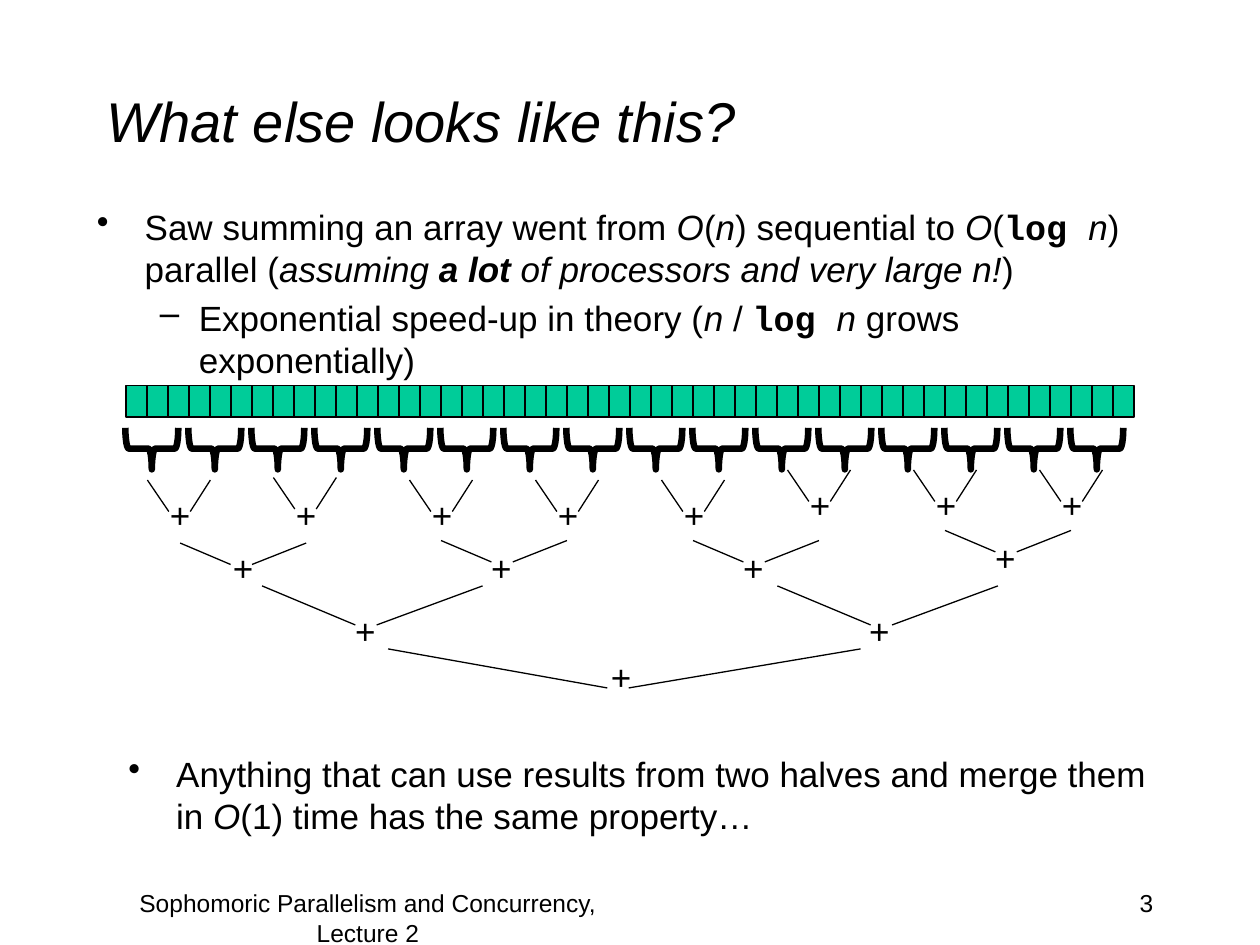
from dataclasses import dataclass

from lxml import etree
from pptx import Presentation
from pptx.dml.color import RGBColor
from pptx.enum.shapes import MSO_CONNECTOR, MSO_SHAPE
from pptx.enum.text import MSO_ANCHOR, MSO_AUTO_SIZE, PP_ALIGN
from pptx.oxml.ns import qn
from pptx.util import Inches, Pt

RECTANGLE = MSO_SHAPE.RECTANGLE
LEFT_BRACE = MSO_SHAPE.LEFT_BRACE
STRAIGHT = MSO_CONNECTOR.STRAIGHT
TOP, MIDDLE = MSO_ANCHOR.TOP, MSO_ANCHOR.MIDDLE
LEFT, CENTER, RIGHT = PP_ALIGN.LEFT, PP_ALIGN.CENTER, PP_ALIGN.RIGHT
GROW = MSO_AUTO_SIZE.SHAPE_TO_FIT_TEXT


@dataclass(frozen=True)
class Theme:
    ink: RGBColor = RGBColor(0x00, 0x00, 0x00)
    cell: RGBColor = RGBColor(0x00, 0xCC, 0x99)
    font: str = "Arial"
    code_font: str = "Courier New"
    title_size: int = 32
    body_size: int = 20
    footer_size: int = 14
    thin: float = 0.75
    thick: float = 3.75


class SlideBuilder:
    def __init__(self, slide, theme):
        self.slide = slide
        self.theme = theme

    def text_box(self, left, top, width, height, anchor=TOP, wrap=True):
        box = self.slide.shapes.add_textbox(
            Inches(left), Inches(top), Inches(width), Inches(height))
        frame = box.text_frame
        frame.word_wrap = wrap
        frame.vertical_anchor = anchor
        return frame

    def add_runs(self, paragraph, runs, size):
        for text, style in runs:
            run = paragraph.add_run()
            run.text = text
            font = run.font
            font.name = self.theme.code_font if "c" in style else self.theme.font
            font.size = Pt(size)
            font.color.rgb = self.theme.ink
            font.bold = "b" in style
            font.italic = "i" in style

    def label(self, box, text, size, align=LEFT, anchor=TOP, style=""):
        paragraph = self.text_box(*box, anchor=anchor).paragraphs[0]
        paragraph.alignment = align
        self.add_runs(paragraph, [(text, style)], size)

    def bullets(self, box, items):
        frame = self.text_box(*box)
        for index, (level, runs) in enumerate(items):
            paragraph = frame.add_paragraph() if index else frame.paragraphs[0]
            paragraph.level = level
            paragraph.space_before = Pt(4)
            margin, indent, mark = ((0.38, -0.38, "•"), (0.81, -0.31, "–"))[level]
            properties = paragraph._p.get_or_add_pPr()
            properties.set("marL", str(Inches(margin)))
            properties.set("indent", str(Inches(indent)))
            etree.SubElement(properties, qn("a:buChar")).set("char", mark)
            self.add_runs(paragraph, runs, self.theme.body_size)

    def outlined(self, kind, left, top, width, height, weight):
        shape = self.slide.shapes.add_shape(
            kind, Inches(left), Inches(top), Inches(width), Inches(height))
        shape.shadow.inherit = False
        shape.line.color.rgb = self.theme.ink
        shape.line.width = Pt(weight)
        return shape

    def array_cell(self, left, top, width, height):
        cell = self.outlined(RECTANGLE, left, top, width, height, self.theme.thin)
        cell.fill.solid()
        cell.fill.fore_color.rgb = self.theme.cell

    def brace(self, left, top, width, height):
        brace = self.outlined(LEFT_BRACE, left, top, width, height, self.theme.thick)
        brace.fill.background()
        brace.rotation = 270

    def line(self, x1, y1, x2, y2):
        line = self.slide.shapes.add_connector(
            STRAIGHT, Inches(x1), Inches(y1), Inches(x2), Inches(y2))
        line.line.color.rgb = self.theme.ink
        line.line.width = Pt(self.theme.thin)
        etree.SubElement(line._element.spPr, qn("a:effectLst"))

    def plus(self, left, top):
        frame = self.text_box(left, top, 0.36, 0.44, wrap=False)
        frame.auto_size = GROW
        self.add_runs(frame.paragraphs[0], [("+", "")], self.theme.body_size)

    def merge(self, left, top, plus_left, plus_top, span, reach, drop):
        self.line(left, top, left + reach, top + drop)
        self.line(left + span, top, left + reach + 0.17, top + drop)
        self.plus(plus_left, plus_top)


SPEEDUP = [
    (0, [("Saw summing an array went from ", ""), ("O", "i"), ("(", ""),
         ("n", "i"), (") sequential to ", ""), ("O", "i"), ("(", ""),
         ("log ", "cb"), ("n", "i"), (") parallel (", ""), ("assuming ", "i"),
         ("a lot", "bi"), (" of processors and very large n!", "i"), (")", "")]),
    (1, [("Exponential speed-up in theory (", ""), ("n ", "i"), ("/ ", ""),
         ("log ", "cb"), ("n ", "i"), ("grows exponentially)", "")]),
]
PROPERTY = [
    (0, [("Anything that can use results from two halves and merge them in ", ""),
         ("O", "i"), ("(1) time has the same property…", "")]),
]

# span, reach, drop, then (left, top, plus left, plus top) per merge
TREE = [
    (0.5, 0.17, 0.25,
     [(1.17, 3.81, 1.25, 3.87), (2.17, 3.79, 2.25, 3.87)]
     + [(x + 0.25, 3.81, x + 0.33, 3.87) for x in (3, 4, 5)]
     + [(x + 0.25, 3.73, x + 0.33, 3.79) for x in (6, 7, 8)]),
    (1, 0.4, 0.17,
     [(1.43, 4.31, 1.75, 4.29), (3.5, 4.29, 3.8, 4.29),
      (5.5, 4.29, 5.8, 4.29), (7.5, 4.21, 7.8, 4.21)]),
    (1.75, 0.74, 0.31, [(2.08, 4.65, 2.72, 4.79), (6.17, 4.65, 6.8, 4.79)]),
    (3.75, 1.74, 0.31, [(3.08, 5.15, 4.75, 5.15)]),
]


def main():
    presentation = Presentation()
    presentation.slide_width = Inches(10)
    presentation.slide_height = Inches(7.5)
    theme = Theme()
    builder = SlideBuilder(
        presentation.slides.add_slide(presentation.slide_layouts[6]), theme)

    builder.label((0.75, 0.33, 8.5, 1.25), "What else looks like this?",
                  theme.title_size, anchor=MIDDLE, style="i")
    builder.bullets((0.67, 1.58, 8.83, 1.25), SPEEDUP)
    builder.label((7.17, 7, 2.08, 0.5), "3", theme.footer_size, RIGHT)
    builder.label((0.67, 7, 4.5, 0.5),
                  "Sophomoric Parallelism and Concurrency, Lecture 2",
                  theme.footer_size, CENTER)

    for index in range(48):
        builder.array_cell(1 + index / 6, 3.06, 1 / 6, 0.25)
    for index in range(16):
        builder.brace(1.04 + index / 2, 3.35, 0.33, 0.42)
    for span, reach, drop, merges in TREE:
        for place in merges:
            builder.merge(*place, span, reach, drop)

    builder.bullets((0.92, 5.92, 8.5, 0.83), PROPERTY)
    presentation.save("out.pptx")


if __name__ == "__main__":
    main()
